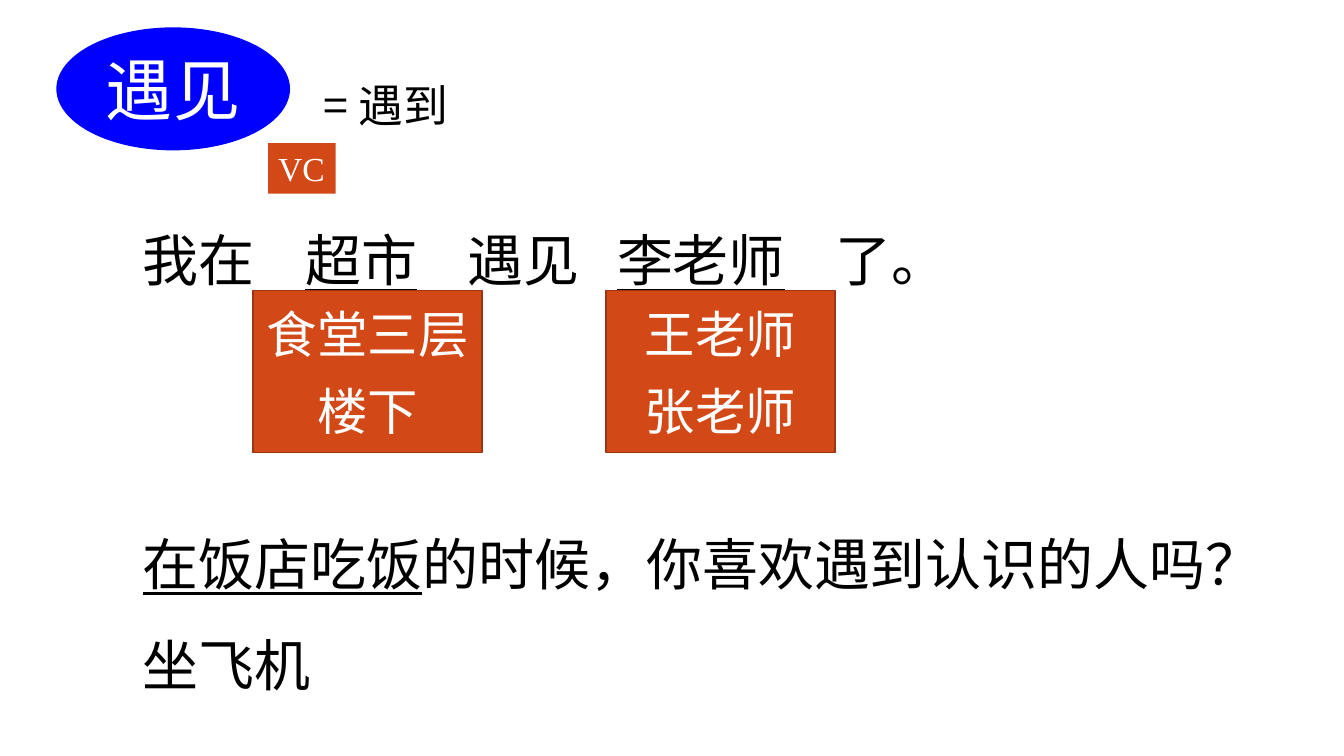
from dataclasses import dataclass
from typing import Optional

from lxml import etree
from pptx import Presentation
from pptx.dml.color import RGBColor
from pptx.enum.shapes import MSO_SHAPE
from pptx.enum.text import MSO_ANCHOR, PP_ALIGN
from pptx.oxml.ns import qn
from pptx.util import Cm, Pt

RECT, OVAL = MSO_SHAPE.RECTANGLE, MSO_SHAPE.OVAL
LEFT, CENTER = PP_ALIGN.LEFT, PP_ALIGN.CENTER
TOP, MIDDLE = MSO_ANCHOR.TOP, MSO_ANCHOR.MIDDLE
SERIF, SANS = "Times New Roman", "Noto Sans CJK SC"
BLACK, WHITE, BLUE = "000000", "FFFFFF", "0000FF"
ORANGE, BROWN = "D34817", "9C3511"


@dataclass
class Run:
    text: str
    underline: bool = False


@dataclass
class Block:
    left: float
    top: float
    width: float
    height: float
    paragraphs: list[list[Run]]
    size: int
    font: str = SERIF
    color: str = BLACK
    shape: Optional[MSO_SHAPE] = None
    fill: Optional[str] = None
    line: Optional[str] = None
    align: PP_ALIGN = LEFT
    anchor: MSO_ANCHOR = TOP
    wrap: bool = True
    line_spacing: float = 1.0
    space_before: int = 0
    tabs: tuple[float, ...] = ()


def rgb(value: str) -> RGBColor:
    return RGBColor.from_string(value)


def add_tabs(p, stops: tuple[float, ...]) -> None:
    tab_list = etree.SubElement(p._p.get_or_add_pPr(), qn("a:tabLst"))
    for stop in stops:
        etree.SubElement(tab_list, qn("a:tab"), pos=str(Cm(stop)), algn="l")


def add_run(p, run: Run, block: Block) -> None:
    r = p.add_run()
    r.text = run.text
    r.font.size = Pt(block.size)
    r.font.name = block.font
    r.font.underline = run.underline
    r.font.color.rgb = rgb(block.color)
    latin = r.font._element.find(qn("a:latin"))
    latin.addnext(etree.Element(qn("a:ea"), typeface=SANS))


def add_block(slide, block: Block) -> None:
    box = [Cm(v) for v in (block.left, block.top, block.width, block.height)]
    if block.shape is None:
        sp = slide.shapes.add_textbox(*box)
    else:
        sp = slide.shapes.add_shape(block.shape, *box)
        sp.shadow.inherit = False
        sp.fill.solid()
        sp.fill.fore_color.rgb = rgb(block.fill)
        if block.line:
            sp.line.color.rgb = rgb(block.line)
            sp.line.width = Pt(1)
        else:
            sp.line.fill.background()
    tf = sp.text_frame
    tf.word_wrap = block.wrap
    tf.vertical_anchor = block.anchor
    for i, runs in enumerate(block.paragraphs):
        p = tf.add_paragraph() if i else tf.paragraphs[0]
        p.alignment = block.align
        p.line_spacing = block.line_spacing
        if i and block.space_before:
            p.space_before = Pt(block.space_before)
        if block.tabs:
            add_tabs(p, block.tabs)
        for run in runs:
            add_run(p, run, block)


def choices(left: float, words: list[str]) -> Block:
    return Block(left, 7.32, 5.77, 4.09, [[Run(w)] for w in words], 36,
                 color=WHITE, shape=RECT, fill=ORANGE, line=BROWN,
                 align=CENTER, anchor=MIDDLE, space_before=12)


SENTENCE = [Run("我在"), Run("\t超市\t", True), Run("遇见"),
            Run("\t李老师\t", True), Run("了。")]
QUESTION = [Run("在饭店吃饭", True), Run("的时候，你喜欢遇到认识的人吗？")]

BLOCKS = [
    Block(3.35, 4.72, 26.21, 2.49, [SENTENCE], 40, line_spacing=1.5,
          tabs=(4.09, 8.18, 11.95, 17.45)),
    Block(1.42, 0.69, 5.89, 3.1, [[Run("遇见")]], 48, SANS, WHITE, OVAL, BLUE,
          align=CENTER, anchor=MIDDLE, wrap=False),
    choices(6.38, ["食堂三层", "楼下"]),
    choices(15.27, ["王老师", "张老师"]),
    Block(7.9, 1.83, 3.94, 1.63, [[Run("= 遇到")]], 32, SANS, wrap=False),
    Block(3.35, 12.37, 29.62, 5.38, [QUESTION, [Run("坐飞机")]], 40,
          line_spacing=1.5),
    Block(6.76, 3.61, 1.7, 1.27, [[Run("VC")]], 24, color=WHITE, shape=RECT,
          fill=ORANGE, wrap=False),
]


def main() -> None:
    prs = Presentation()
    prs.slide_width, prs.slide_height = Cm(33.87), Cm(19.05)
    slide = prs.slides.add_slide(prs.slide_layouts[6])
    for block in BLOCKS:
        add_block(slide, block)
    prs.save("out.pptx")


if __name__ == "__main__":
    main()
